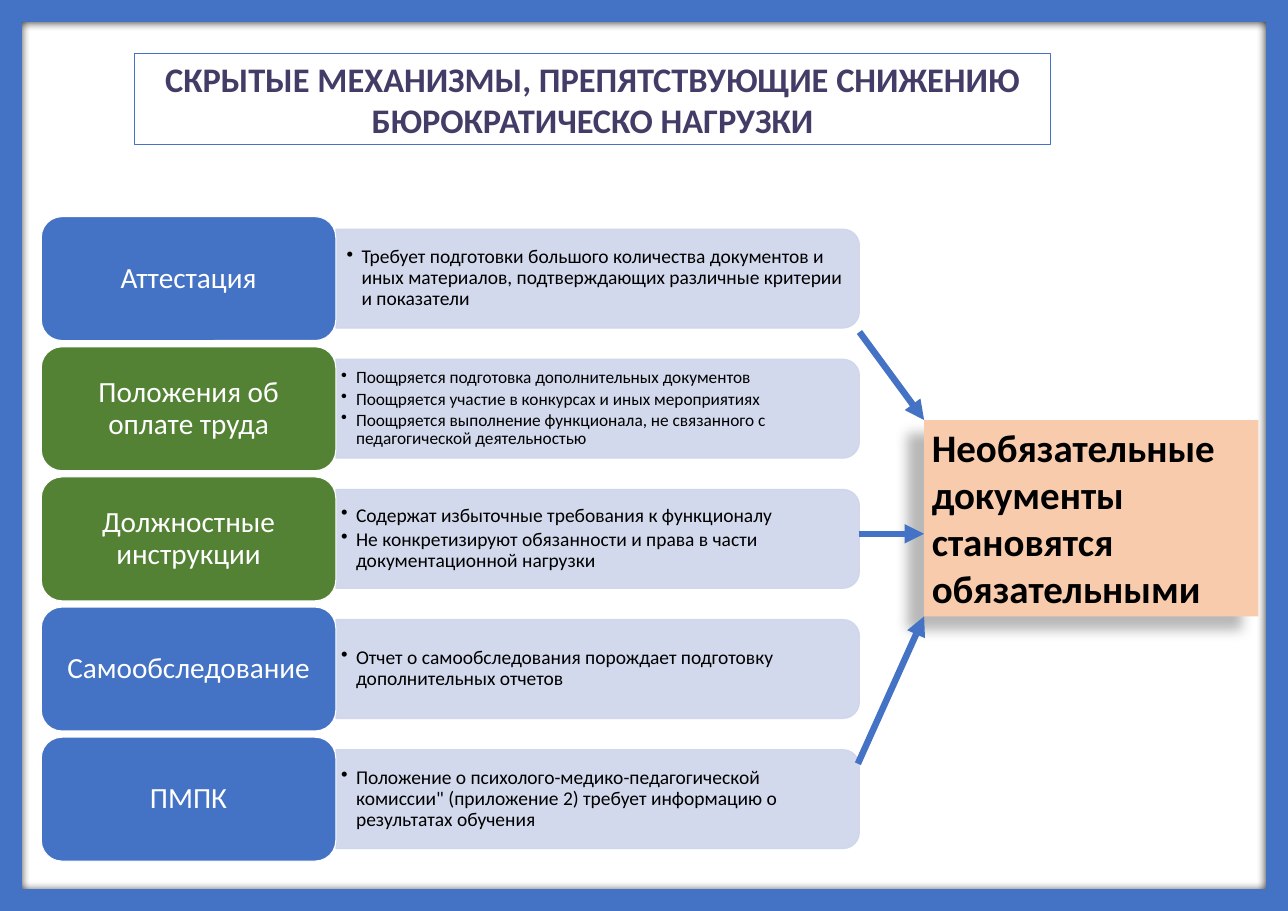
from dataclasses import dataclass
from typing import Any

from lxml import etree
from pptx import Presentation
from pptx import util as u
from pptx.dml.color import RGBColor
from pptx.enum import shapes, text
from pptx.oxml.ns import qn

BLUE = RGBColor(0x44, 0x72, 0xC4)
GREEN = RGBColor(0x54, 0x82, 0x35)
PALE = RGBColor(0xCF, 0xD5, 0xEA)
PEACH = RGBColor(0xF8, 0xCB, 0xAD)
PLUM = RGBColor(0x42, 0x3D, 0x67)
WHITE = RGBColor(0xFF, 0xFF, 0xFF)
BLACK = RGBColor(0, 0, 0)

WIDE, HIGH = 16.53, 11.69
LEFT, TOP, PITCH = 0.53, 2.78, 1.67
LABEL_W, LABEL_H = 3.78, 1.59
BAR_W, BAR_H = 6.72, 1.27
NOTE_W, NOTE_H = 6.66, 1.15
HANG = 0.19

KIND = shapes.MSO_SHAPE
MID = text.MSO_ANCHOR.MIDDLE
CENTER = text.PP_ALIGN.CENTER


@dataclass
class Topic:
    label: str
    fill: RGBColor
    notes: list[str]
    size: float = 18
    inset: tuple[float, float] = (0.07, 0.03)


@dataclass
class Arrow:
    start: tuple[float, float]
    end: tuple[float, float]


TOPICS = [
    Topic("Аттестация", BLUE, [
        "Требует подготовки большого количества документов и иных материалов, "
        "подтверждающих различные критерии и показатели"], inset=(0.14, 0.07)),
    Topic("Положения об оплате труда", GREEN, [
        "Поощряется подготовка дополнительных документов",
        "Поощряется участие в конкурсах и иных мероприятиях",
        "Поощряется выполнение функционала, не связанного с "
        "педагогической деятельностью"], size=16),
    Topic("Должностные инструкции", GREEN, [
        "Содержат избыточные требования к функционалу",
        "Не конкретизируют обязанности и права в части "
        "документационной нагрузки"]),
    Topic("Самообследование", BLUE, [
        "Отчет о самообследования порождает подготовку "
        "дополнительных отчетов"]),
    Topic("ПМПК", BLUE, [
        "Положение о психолого-медико-педагогической комиссии\" "
        "(приложение 2) требует информацию о результатах обучения"]),
]

ARROWS = [
    Arrow((11.03, 4.26), (11.86, 5.39)),
    Arrow((11.02, 6.85), (11.86, 6.85)),
    Arrow((11.01, 9.8), (11.86, 7.91)),
]


def apply(item: Any, style: dict[str, Any]) -> None:
    for name, value in style.items():
        setattr(item, name, value)


def write(shape: Any, lines: list[str], size: float, color: RGBColor,
          inset: tuple[float, float] = (0.1, 0.05), bold: bool = False,
          anchor: Any = MID, align: Any = text.PP_ALIGN.LEFT,
          space: float = 1.0, after: float = 0, bullet: bool = False) -> None:
    frame = shape.text_frame
    side, edge = map(u.Inches, inset)
    apply(frame, {"word_wrap": True, "auto_size": text.MSO_AUTO_SIZE.NONE,
                  "vertical_anchor": anchor, "margin_left": side,
                  "margin_right": side, "margin_top": edge,
                  "margin_bottom": edge})
    for index, line in enumerate(lines):
        para = frame.add_paragraph() if index else frame.paragraphs[0]
        if bullet:
            props = para._p.get_or_add_pPr()
            props.set("marL", str(u.Inches(HANG)))
            props.set("indent", str(-u.Inches(HANG)))
            etree.SubElement(props, qn("a:buChar"), char="•")
        apply(para, {"alignment": align, "line_spacing": space,
                     "space_before": u.Pt(0), "space_after": u.Pt(after)})
        run = para.add_run()
        run.text = line
        apply(run.font, {"name": "Calibri", "size": u.Pt(size), "bold": bold})
        run.font.color.rgb = color


def paint(shape: Any, fill: RGBColor, line: RGBColor | None = None) -> None:
    shape.fill.solid()
    shape.fill.fore_color.rgb = fill
    if line is None:
        shape.line.fill.background()
    else:
        shape.line.color.rgb = line
        shape.line.width = u.Pt(1)
    shape.shadow.inherit = False


def block(slide: Any, kind: Any, spot: tuple[float, float, float, float],
          fill: RGBColor, line: RGBColor | None = None) -> Any:
    shape = slide.shapes.add_shape(kind, *map(u.Inches, spot))
    paint(shape, fill, line)
    return shape


def shade(shape: Any, alpha: int, blur: float, dist: float, angle: int) -> None:
    effects = shape._element.spPr.find(qn("a:effectLst"))
    outer = etree.SubElement(
        effects, qn("a:outerShdw"), blurRad=str(u.Pt(blur)),
        dist=str(u.Pt(dist)), dir=str(angle * 60000), rotWithShape="0")
    color = etree.SubElement(outer, qn("a:srgbClr"), val=str(BLACK))
    etree.SubElement(color, qn("a:alpha"), val=str(alpha * 1000))


def draw_topic(slide: Any, topic: Topic, top: float) -> None:
    middle = top + LABEL_H / 2
    right = LEFT + LABEL_W
    bar = block(slide, KIND.ROUND_2_SAME_RECTANGLE,
                (right + (BAR_W - BAR_H) / 2, middle - BAR_W / 2, BAR_H, BAR_W),
                PALE, PALE)
    bar.rotation = 90
    for color in bar._element.spPr.iter(qn("a:srgbClr")):
        etree.SubElement(color, qn("a:alpha"), val="90000")
    note = slide.shapes.add_textbox(*map(
        u.Inches, (right, middle - NOTE_H / 2, NOTE_W, NOTE_H)))
    write(note, topic.notes, topic.size, BLACK, topic.inset, space=0.9,
          after=topic.size * 0.15, bullet=True)
    label = block(slide, KIND.ROUNDED_RECTANGLE,
                  (LEFT, top, LABEL_W, LABEL_H), topic.fill, WHITE)
    write(label, [topic.label], 27, WHITE, (0.11, 0.06), align=CENTER, space=0.9)


def draw_arrow(slide: Any, arrow: Arrow) -> None:
    link = slide.shapes.add_connector(
        shapes.MSO_CONNECTOR.STRAIGHT,
        *map(u.Inches, arrow.start + arrow.end))
    link.line.color.rgb = BLUE
    link.line.width = u.Pt(6)
    props = link._element.spPr
    etree.SubElement(props.find(qn("a:ln")), qn("a:tailEnd"), type="triangle")
    etree.SubElement(props, qn("a:effectLst"))


def main() -> None:
    deck = Presentation()
    apply(deck, {"slide_width": u.Inches(WIDE), "slide_height": u.Inches(HIGH)})
    slide = deck.slides.add_slide(deck.slide_layouts[5])

    border = block(slide, KIND.FRAME, (0, 0, WIDE, HIGH), BLUE)
    border.adjustments[0] = 0.024
    shade(border, 100, 8.5, 1, 90)

    title = slide.shapes.title
    apply(title, {"left": u.Inches(1.73), "top": u.Inches(0.69),
                  "width": u.Inches(11.75), "height": u.Inches(1.17)})
    paint(title, WHITE, BLUE)
    write(title, ["СКРЫТЫЕ МЕХАНИЗМЫ, ПРЕПЯТСТВУЮЩИЕ СНИЖЕНИЮ "
                  "БЮРОКРАТИЧЕСКО НАГРУЗКИ"],
          31.8, PLUM, bold=True, align=CENTER)

    for index, topic in enumerate(TOPICS):
        draw_topic(slide, topic, TOP + index * PITCH)

    result = block(slide, KIND.RECTANGLE, (11.86, 5.39, 4.29, 2.52), PEACH)
    shade(result, 28, 11.8, 19.7, 141)
    write(result, ["Необязательные документы", "становятся обязательными"],
          36, BLACK, bold=True, anchor=text.MSO_ANCHOR.TOP)

    for arrow in ARROWS:
        draw_arrow(slide, arrow)

    deck.save("out.pptx")


if __name__ == "__main__":
    main()
